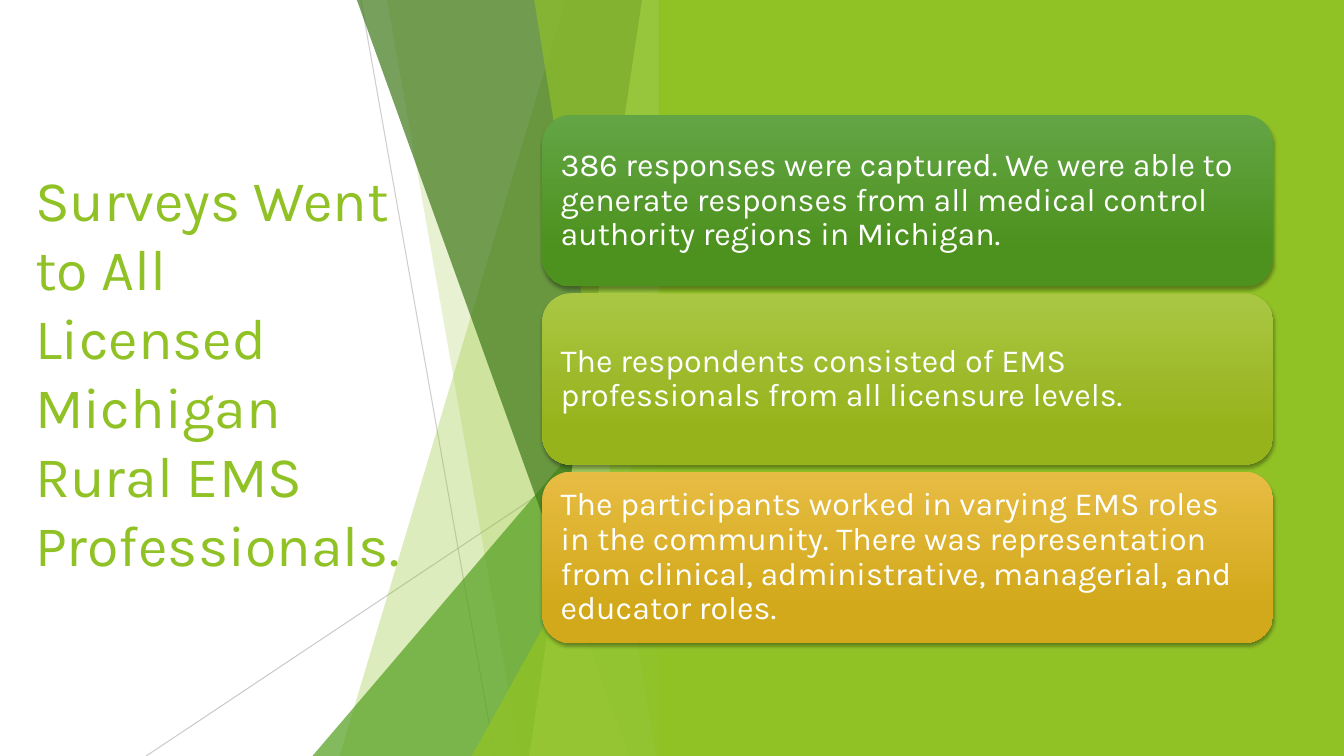
from lxml import etree
from pptx import Presentation
from pptx.dml.color import RGBColor
from pptx.enum.shapes import MSO_CONNECTOR, MSO_SHAPE
from pptx.enum.text import MSO_ANCHOR, PP_ALIGN
from pptx.oxml.ns import qn
from pptx.util import Pt

STRAIGHT = MSO_CONNECTOR.STRAIGHT
TRIANGLE = MSO_SHAPE.ISOSCELES_TRIANGLE
RECTANGLE = MSO_SHAPE.RECTANGLE
ROUNDED = MSO_SHAPE.ROUNDED_RECTANGLE
MIDDLE = MSO_ANCHOR.MIDDLE
LEFT = PP_ALIGN.LEFT

WHITE = RGBColor(0xFF, 0xFF, 0xFF)
LIME = RGBColor(0x90, 0xC2, 0x26)
PALE_LIME = RGBColor(0xC0, 0xE4, 0x74)
GREEN = RGBColor(0x54, 0xA0, 0x21)
DARK_GREEN = RGBColor(0x3F, 0x78, 0x19)
GREY = RGBColor(0xBF, 0xBF, 0xBF)
FONT = "Karla"

# Content
TITLE = "Surveys Went to All Licensed Michigan Rural EMS Professionals."
CARDS = [  # text, gradient start, gradient end
    ("386 responses were captured. We were able to generate responses "
     "from all medical control authority regions in Michigan.",
     RGBColor(0x63, 0xA5, 0x45), RGBColor(0x4D, 0x92, 0x1E)),
    ("The respondents consisted of EMS professionals from all licensure levels.",
     RGBColor(0xAA, 0xC7, 0x44), RGBColor(0x97, 0xB3, 0x1C)),
    ("The participants worked in varying EMS roles in the community. There was "
     "representation from clinical, administrative, managerial, and educator roles.",
     RGBColor(0xE7, 0xBC, 0x43), RGBColor(0xD2, 0xA9, 0x1B)),
]

# Layout in points
WIDTH, HEIGHT = 960, 540
FACET_RIGHT = 479.5
PANEL_LEFT = 470.6
CARD_LEFT, CARD_TOP, CARD_WIDTH, CARD_HEIGHT, CARD_GAP = 387.4, 82.1, 522, 122.4, 5
RAYS = [  # start, end, opacity in percent
    ((257.8, 0), (353.5, HEIGHT), 75),
    ((FACET_RIGHT, 290.2), (104.4, HEIGHT), 80),
]
FACETS = [  # kind, (top x, bottom x) or (left, top), colour, opacity
    ("band", (403.9, 242.6), LIME, 30),
    ("band", (276.5, 371.5), LIME, 20),
    ("triangle", (223.2, 239.8), GREEN, 72),
    ("band", (254.9, 449.3), DARK_GREEN, 70),
    ("band", (458.6, 378), PALE_LIME, 70),
    ("band", (381.6, 468.7), LIME, 65),
    ("triangle", (337, 283), LIME, 80),
]


def set_opacity(element, percent):
    color = next(element.iter(qn("a:srgbClr")))
    etree.SubElement(color, qn("a:alpha"), val=str(percent * 1000))


def fill_plain(shape, color, opacity=100):
    shape.shadow.inherit = False
    shape.line.fill.background()
    shape.fill.solid()
    shape.fill.fore_color.rgb = color
    if opacity < 100:
        set_opacity(shape.fill._xPr, opacity)


def write_text(shape, text, size, color, inset=(7.2, 3.6), line_spacing=None):
    frame = shape.text_frame
    frame.word_wrap = True
    frame.vertical_anchor = MIDDLE
    frame.margin_left = frame.margin_right = Pt(inset[0])
    frame.margin_top = frame.margin_bottom = Pt(inset[1])
    paragraph = frame.paragraphs[0]
    paragraph.alignment = LEFT
    if line_spacing:
        paragraph.line_spacing = line_spacing
    run = paragraph.add_run()
    run.text = text
    run.font.name = FONT
    run.font.size = Pt(size)
    run.font.color.rgb = color


def add_ray(shapes, start, end, opacity):
    ray = shapes.add_connector(STRAIGHT, *map(Pt, start + end))
    ray.line.width = Pt(0.75)
    ray.line.color.rgb = GREY
    properties = ray._element.spPr
    set_opacity(properties, opacity)
    etree.SubElement(properties, qn("a:effectLst"))


def add_facet(shapes, kind, corner, color, opacity):
    if kind == "triangle":
        left, top = corner
        facet = shapes.add_shape(TRIANGLE, Pt(left), Pt(top),
                                 Pt(FACET_RIGHT - left), Pt(HEIGHT - top))
        facet.adjustments[0] = 1
    else:
        top_x, bottom_x = corner
        builder = shapes.build_freeform(Pt(top_x), 0, scale=1.0)
        outline = [(FACET_RIGHT, 0), (FACET_RIGHT, HEIGHT), (bottom_x, HEIGHT)]
        builder.add_line_segments([(Pt(x), Pt(y)) for x, y in outline], close=True)
        facet = builder.convert_to_shape()
    fill_plain(facet, color, opacity)


def add_card(shapes, top, text, start_color, end_color):
    card = shapes.add_shape(ROUNDED, Pt(CARD_LEFT), Pt(top),
                            Pt(CARD_WIDTH), Pt(CARD_HEIGHT))
    card.line.fill.background()
    card.fill.gradient()
    card.fill.gradient_angle = 270
    stops = zip(card.fill.gradient_stops, (0, 0.78), (start_color, end_color))
    for stop, position, color in stops:
        stop.position = position
        stop.color.rgb = color
    # Soft shadow below the card
    card.shadow.inherit = False
    effects = card._element.spPr.find(qn("a:effectLst"))
    shadow = etree.SubElement(effects, qn("a:outerShdw"), blurRad=str(Pt(3)),
                              dist=str(Pt(2)), dir="5400000", rotWithShape="0")
    etree.SubElement(shadow, qn("a:srgbClr"), val="000000")
    set_opacity(shadow, 35)
    write_text(card, text, 23, WHITE, inset=(7.2, 7.2), line_spacing=0.9)


def main():
    presentation = Presentation()
    presentation.slide_width, presentation.slide_height = Pt(WIDTH), Pt(HEIGHT)
    slide = presentation.slides.add_slide(presentation.slide_layouts[6])
    slide.background.fill.solid()
    slide.background.fill.fore_color.rgb = WHITE
    shapes = slide.shapes

    # Title
    title = shapes.add_textbox(Pt(18), Pt(103.7), Pt(279.4), Pt(322.6))
    write_text(title, TITLE, 41, LIME)

    # Faceted backdrop and panel
    for ray in RAYS:
        add_ray(shapes, *ray)
    for facet in FACETS:
        add_facet(shapes, *facet)
    panel = shapes.add_shape(RECTANGLE, Pt(PANEL_LEFT), 0,
                             Pt(WIDTH - PANEL_LEFT), Pt(HEIGHT))
    fill_plain(panel, LIME)

    # Cards
    for index, card in enumerate(CARDS):
        add_card(shapes, CARD_TOP + index * (CARD_HEIGHT + CARD_GAP), *card)

    presentation.save("out.pptx")


if __name__ == "__main__":
    main()
